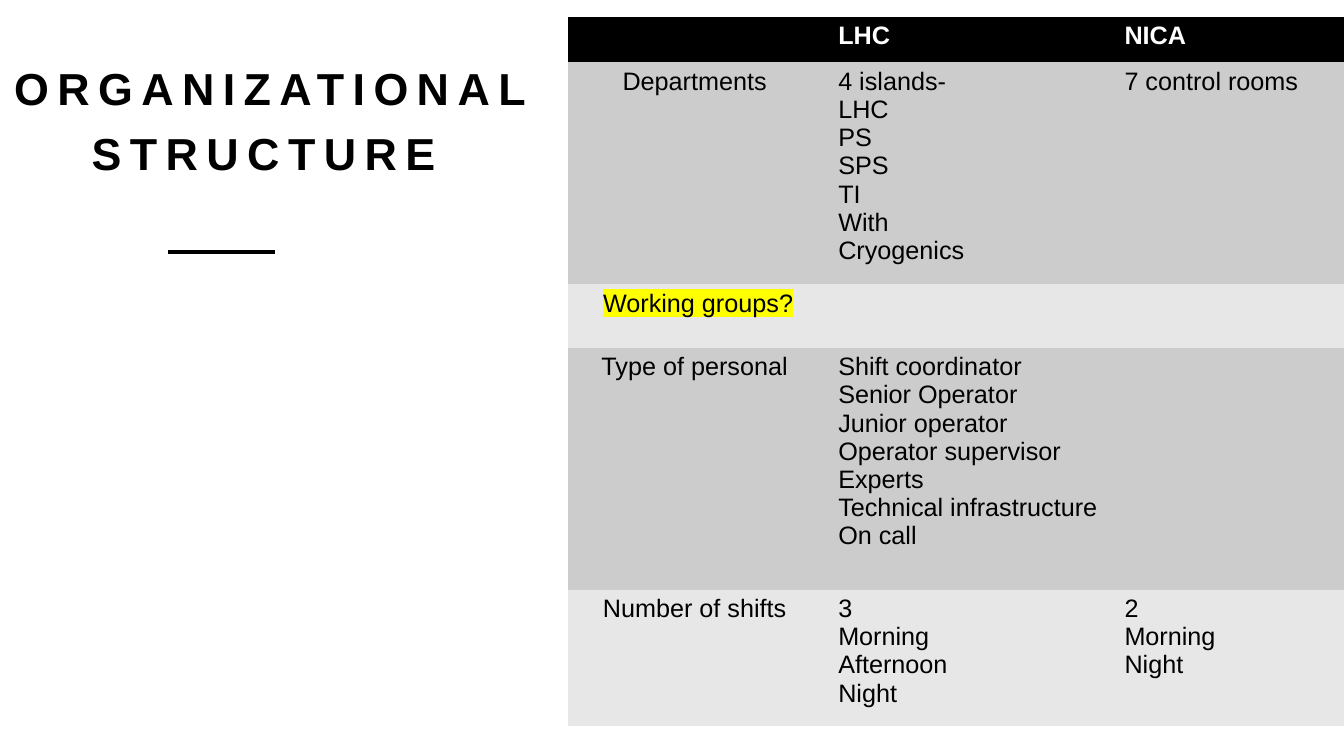
from lxml.etree import SubElement
from pptx import Presentation
from pptx.dml.color import RGBColor
from pptx.enum.shapes import MSO_CONNECTOR as Connector
from pptx.enum.text import MSO_ANCHOR as Anchor, PP_ALIGN as Align
from pptx.oxml.ns import qn
from pptx.util import Pt

BLACK, WHITE, YELLOW = "000000", "FFFFFF", "FFFF00"
BAND_FILLS = ["CCCCCC", "E7E7E7"]
COLUMN_WIDTHS = [185.76, 204.48, 164.16]
ROW_HEIGHTS = [32.4, 154.8, 45.36, 172.8, 97.4]

# Each cell is a list of paragraphs
HEADER = [[], ["LHC"], ["NICA"]]
BODY = [
    [["Departments "],
     ["4 islands-", "LHC", "PS", "SPS", "TI", "With", "Cryogenics"],
     ["7 control rooms"]],
    [["Working groups?"], [], []],
    [["Type of personal "],
     ["Shift coordinator", "Senior Operator", "Junior operator",
      "Operator supervisor", "Experts", "Technical infrastructure", "On call"],
     []],
    [["Number of shifts "],
     ["3", "Morning", "Afternoon", "Night"],
     ["2", "Morning", "Night"]],
]
HIGHLIGHTED = "Working groups?"


def color(value):
    return RGBColor.from_string(value)


def add_run(paragraph, text, size, font_color, bold=False):
    run = paragraph.add_run()
    run.text = text
    run.font.name = "Arial"
    run.font.size = Pt(size)
    run.font.bold = bold
    run.font.color.rgb = color(font_color)
    return run


def highlight(run, value):
    properties = run.font._element
    mark = SubElement(properties, qn("a:highlight"))
    SubElement(mark, qn("a:srgbClr"), val=value)
    properties.find(qn("a:solidFill")).addnext(mark)


def add_title(slide, text):
    shape = slide.shapes.add_textbox(Pt(-18), Pt(108), Pt(412.56), Pt(61.2))
    frame = shape.text_frame
    frame.word_wrap = True
    frame.vertical_anchor = Anchor.BOTTOM
    frame.margin_bottom = Pt(41)
    paragraph = frame.paragraphs[0]
    paragraph.alignment = Align.CENTER
    paragraph.line_spacing = 1.2
    run = add_run(paragraph, text, 32, BLACK, bold=True)
    run.font._element.set("spc", "600")  # letter spacing of 6 pt


def add_rule(slide, left, right, top):
    line = slide.shapes.add_connector(
        Connector.STRAIGHT, Pt(left), Pt(top), Pt(right), Pt(top))
    line.line.color.rgb = color(BLACK)
    line.line.width = Pt(2.5)
    SubElement(line._element.spPr, qn("a:effectLst"))


def fill_cell(cell, lines, fill, font_color, bold, alignment):
    cell.fill.solid()
    cell.fill.fore_color.rgb = color(fill)
    frame = cell.text_frame
    for index, text in enumerate(lines):
        paragraph = frame.add_paragraph() if index else frame.paragraphs[0]
        paragraph.alignment = alignment
        run = add_run(paragraph, text, 18, font_color, bold)
        if text == HIGHLIGHTED:
            highlight(run, YELLOW)


def add_comparison_table(slide, left, top):
    rows = [HEADER] + BODY
    table = slide.shapes.add_table(
        len(rows), len(HEADER), Pt(left), Pt(top),
        Pt(sum(COLUMN_WIDTHS)), Pt(sum(ROW_HEIGHTS))).table
    # The cells carry their own fills and lines, so the style is "No Style, No Grid"
    table._tbl.tblPr.find(qn("a:tableStyleId")).text = (
        "{2D5ABB26-0587-4C30-8999-92F81FD0307C}")
    for column, width in zip(table.columns, COLUMN_WIDTHS):
        column.width = Pt(width)
    for row, height in zip(table.rows, ROW_HEIGHTS):
        row.height = Pt(height)
    for row_index, cells in enumerate(rows):
        is_header = row_index == 0
        fill = BLACK if is_header else BAND_FILLS[(row_index - 1) % 2]
        for column_index, lines in enumerate(cells):
            fill_cell(table.cell(row_index, column_index), lines, fill,
                      WHITE if is_header else BLACK, is_header,
                      Align.LEFT if column_index else Align.CENTER)


def main():
    presentation = Presentation()
    presentation.slide_width = Pt(960)
    presentation.slide_height = Pt(540)
    slide = presentation.slides.add_slide(presentation.slide_layouts[6])

    # Left side: title and short rule
    add_title(slide, " ORGANIZATIONAL STRUCTURE")
    add_rule(slide, 120, 196.5, 180)

    # Right side: comparison of the two facilities
    add_comparison_table(slide, 405.8, 12.2)

    presentation.save("out.pptx")


if __name__ == "__main__":
    main()
